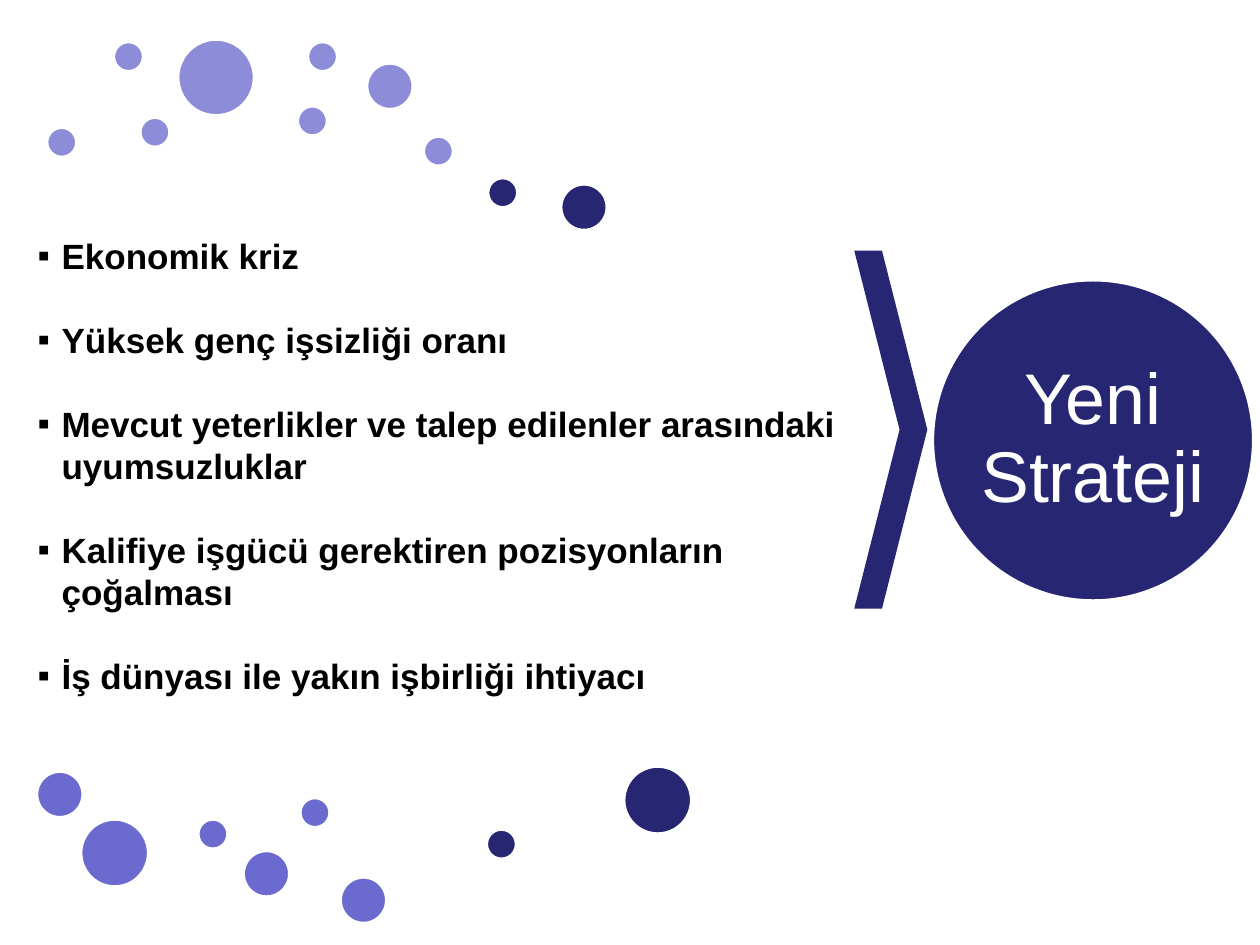
import pptx
import pptx.dml.color
import pptx.enum.shapes
import pptx.enum.text
import pptx.oxml
import pptx.oxml.ns
import pptx.util

WHITE = pptx.dml.color.RGBColor(0xFF, 0xFF, 0xFF)
BLACK = pptx.dml.color.RGBColor(0x00, 0x00, 0x00)
NAVY = pptx.dml.color.RGBColor(0x26, 0x26, 0x73)
LAVENDER = pptx.dml.color.RGBColor(0x8C, 0x8C, 0xD8)
VIOLET = pptx.dml.color.RGBColor(0x6B, 0x6B, 0xCF)

COLUMNS, ROWS = 100, 75
SMALL, MEDIUM, LARGE, HUGE = 2.4, 3.7, 5.4, 6.1

# Left column and top row of the dots, by colour and diameter
DOTS = [
    (LAVENDER, SMALL, [(11.1, 9.3), (3.7, 10.1), (9, 3.3), (24.4, 3.3),
                       (23.6, 8.4), (33.6, 10.8)]),
    (LAVENDER, MEDIUM, [(29.1, 5)]),
    (LAVENDER, HUGE, [(14.1, 3.1)]),
    (NAVY, SMALL, [(38.7, 14.1), (38.6, 65.8)]),
    (NAVY, MEDIUM, [(44.5, 14.6)]),
    (NAVY, LARGE, [(49.5, 60.8)]),
    (VIOLET, SMALL, [(23.8, 63.3), (15.7, 65)]),
    (VIOLET, MEDIUM, [(2.9, 61.2), (19.3, 67.5), (27, 69.6)]),
    (VIOLET, LARGE, [(6.4, 65)]),
]

REASONS = [
    "Ekonomik kriz",
    "Yüksek genç işsizliği oranı",
    "Mevcut yeterlikler ve talep edilenler arasındaki uyumsuzluklar",
    "Kalifiye işgücü gerektiren pozisyonların çoğalması",
    "İş dünyası ile yakın işbirliği ihtiyacı",
]


class SlideBuilder:
    """Places elements on a grid of 100 columns and 75 rows."""

    font_name = "Arial"

    def __init__(self, presentation):
        self.slide = presentation.slides.add_slide(presentation.slide_layouts[6])
        self.column = presentation.slide_width / COLUMNS
        self.row = presentation.slide_height / ROWS

    def area(self, left, top, width, height):
        return (round(left * self.column), round(top * self.row),
                round(width * self.column), round(height * self.row))

    def shape(self, kind, area, color):
        shape = self.slide.shapes.add_shape(kind, *self.area(*area))
        shape.shadow.inherit = False
        shape.fill.solid()
        shape.fill.fore_color.rgb = color
        shape.line.fill.background()
        return shape

    def circle(self, left, top, diameter, color):
        circle = self.shape(pptx.enum.shapes.MSO_SHAPE.OVAL,
                            (left, top, diameter, diameter), color)
        circle.line.color.rgb = WHITE
        circle.line.width = pptx.util.Pt(2)
        return circle

    def chevron(self, area, color, depth):
        chevron = self.shape(pptx.enum.shapes.MSO_SHAPE.CHEVRON, area, color)
        chevron.adjustments[0] = depth

    def run(self, paragraph, text, size, color, bold=False):
        run = paragraph.add_run()
        run.text = text
        run.font.name = self.font_name
        run.font.size = pptx.util.Pt(size)
        run.font.color.rgb = color
        run.font.bold = bold

    def label(self, shape, text, size, color):
        frame = shape.text_frame
        frame.margin_left = frame.margin_right = 0
        frame.margin_top = frame.margin_bottom = 0
        frame.word_wrap = True
        frame.vertical_anchor = pptx.enum.text.MSO_ANCHOR.MIDDLE
        paragraph = frame.paragraphs[0]
        paragraph.alignment = pptx.enum.text.PP_ALIGN.CENTER
        paragraph.line_spacing = 0.9
        self.run(paragraph, text, size, color)

    def bullet(self, paragraph, character, indent):
        properties = paragraph._p.get_or_add_pPr()
        properties.set("marL", str(indent))
        properties.set("indent", str(-indent))
        namespace = pptx.oxml.ns.nsdecls("a")
        for markup in (f'<a:buFont {namespace} typeface="{self.font_name}"/>',
                       f'<a:buChar {namespace} char="{character}"/>'):
            properties.append(pptx.oxml.parse_xml(markup))

    def bullet_list(self, area, items, size, line_height):
        """Lists the items with one line's height of space between them."""
        frame = self.slide.shapes.add_textbox(*self.area(*area)).text_frame
        frame.word_wrap = True
        for index, item in enumerate(items):
            paragraph = frame.add_paragraph() if index else frame.paragraphs[0]
            self.bullet(paragraph, "▪", pptx.util.Inches(0.19))
            paragraph.line_spacing = pptx.util.Pt(line_height)
            if index:
                paragraph.space_before = pptx.util.Pt(line_height)
            self.run(paragraph, item, size, BLACK, bold=True)


def main():
    presentation = pptx.Presentation()
    presentation.slide_width = pptx.util.Inches(10)
    presentation.slide_height = pptx.util.Inches(7.5)
    builder = SlideBuilder(presentation)

    for color, diameter, places in DOTS:
        for left, top in places:
            builder.circle(left, top, diameter, color)

    builder.chevron((67.8, 19.9, 5.8, 28.4), NAVY, depth=0.62)
    strategy = builder.circle(74, 22.2, 25.5, NAVY)
    builder.label(strategy, "Yeni Strateji", 41, WHITE)
    builder.bullet_list((2, 18.1, 65.8, 41.1), REASONS, size=20, line_height=24)

    presentation.save("out.pptx")


if __name__ == "__main__":
    main()
